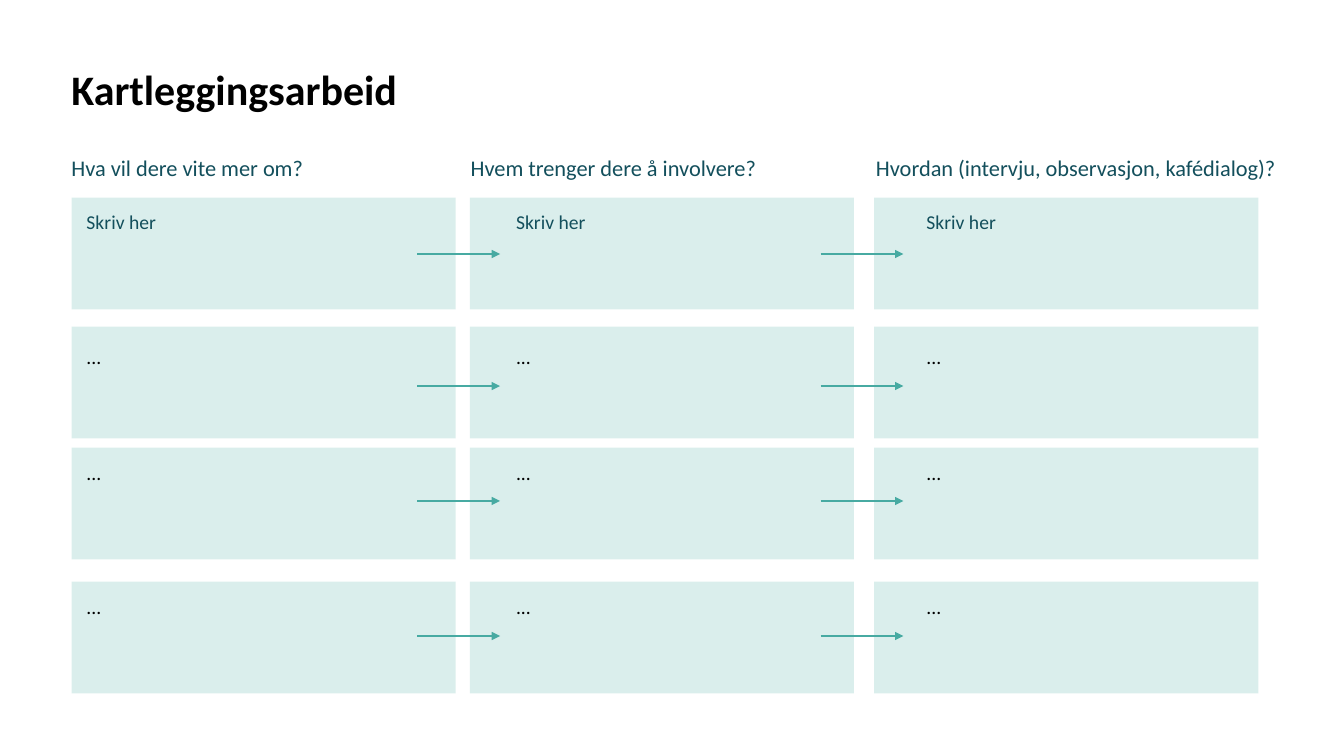
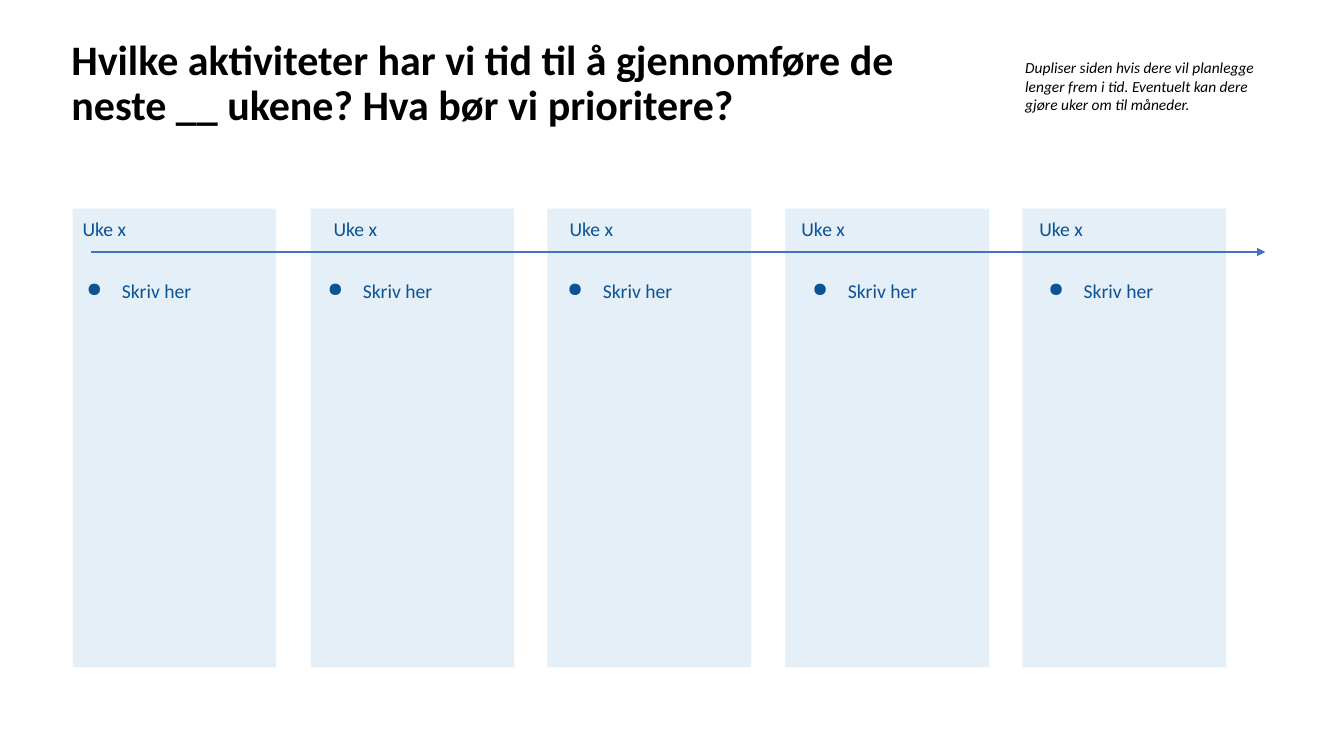
from dataclasses import dataclass

from lxml import etree
from pptx import Presentation
from pptx.dml.color import RGBColor
from pptx.enum.shapes import MSO_CONNECTOR, MSO_SHAPE
from pptx.enum.text import MSO_ANCHOR
from pptx.oxml.ns import qn
from pptx.util import Pt

PX = 9144  # one px is a hundredth of an inch
RECTANGLE = MSO_SHAPE.RECTANGLE
STRAIGHT = MSO_CONNECTOR.STRAIGHT
TOP, BOTTOM = MSO_ANCHOR.TOP, MSO_ANCHOR.BOTTOM


@dataclass(frozen=True)
class Theme:
    font: str = "Calibri"
    black: str = "000000"
    teal: str = "47AAA2"
    dark_teal: str = "134F5C"
    pale_blue: str = "CFE2F3"
    dark_blue: str = "0B5394"
    arrow_blue: str = "4472C4"
    title_size: int = 30
    heading_size: int = 16
    body_size: int = 14
    note_size: int = 11
    arrow_width: float = 1.5


theme = Theme()


def add_text(slide, text, left, top, width, height, size, color, anchor=TOP):
    box = slide.shapes.add_textbox(left * PX, top * PX, width * PX, height * PX)
    box.text_frame.word_wrap = True
    box.text_frame.vertical_anchor = anchor
    paragraph = box.text_frame.paragraphs[0]
    paragraph.text = text
    paragraph.font.name = theme.font
    paragraph.font.size = Pt(size)
    paragraph.font.color.rgb = RGBColor.from_string(color)
    return paragraph


def add_panel(slide, left, top, width, height, color, opacity):
    panel = slide.shapes.add_shape(
        RECTANGLE, left * PX, top * PX, width * PX, height * PX)
    panel.shadow.inherit = False
    panel.line.fill.background()
    panel.fill.solid()
    panel.fill.fore_color.rgb = RGBColor.from_string(color)
    color_node = next(panel.fill._xPr.iter(qn("a:srgbClr")))
    etree.SubElement(color_node, qn("a:alpha"), val=str(opacity * 1000))


presentation = Presentation()
presentation.slide_width = 1333 * PX
presentation.slide_height = 750 * PX
blank = presentation.slide_layouts[6]
survey = presentation.slides.add_slide(blank)
plan = presentation.slides.add_slide(blank)

# Titles
for slide, text, width, height, anchor in (
    (survey, "Kartleggingsarbeid", 610, 85, BOTTOM),
    (plan, "Hvilke aktiviteter har vi tid til å gjennomføre de neste __ ukene? "
           "Hva bør vi prioritere?", 927, 148, TOP),
):
    title = add_text(slide, text, 61, 34, width, height,
                     theme.title_size, theme.black, anchor)
    title.font.bold = True
    title.line_spacing = 0.9

arrows = []  # slide, left, right, y, color

# Survey: three columns of panels with headings
survey_columns = (  # heading, heading left, panel left, text left
    ("Hva vil dere vite mer om?", 61, 71, 76),
    ("Hvem trenger dere å involvere?", 457, 466, 502),
    ("Hvordan (intervju, observasjon, kafédialog)?", 859, 867, 909),
)
survey_rows = (  # panel top, text top, arrow y, text, text color
    (196, 203, 252, "Skriv her", theme.dark_teal),
    (324, 337, 383, "...", theme.black),
    (444, 452, 497, "...", theme.black),
    (577, 585, 631, "...", theme.black),
)
for heading, heading_left, panel_left, text_left in survey_columns:
    add_text(survey, heading, heading_left, 148, 470, 37,
             theme.heading_size, theme.dark_teal)
    for panel_top, text_top, arrow_y, text, color in survey_rows:
        add_panel(survey, panel_left, panel_top, 381, 111, theme.teal, 20)
        add_text(survey, text, text_left, text_top, 330, 93,
                 theme.body_size, color)

for panel_top, text_top, arrow_y, text, color in survey_rows:
    for arrow_left in (414, 814):
        arrows.append((survey, arrow_left, arrow_left + 82, arrow_y, theme.teal))

# Plan: one panel per week, evenly spaced
week_lefts = (72, 321, 555, 785, 1021)
task_lefts = (61, 300, 538, 781, 1015)
for index, (week_left, task_left) in enumerate(zip(week_lefts, task_lefts)):
    add_panel(plan, 72 + (471 * index + 1) // 2, 207, 202, 455,
              theme.pale_blue, 54)
    add_text(plan, "Uke x", week_left, 210, 91, 34,
             theme.body_size, theme.dark_blue)
    task = add_text(plan, "Skriv her", task_left, 272, 201, 93,
                    theme.body_size, theme.dark_blue)
    properties = task._p.get_or_add_pPr()
    properties.set("marL", str(50 * PX))
    properties.set("indent", str(-35 * PX))
    bullet_color = etree.SubElement(properties, qn("a:buClr"))
    etree.SubElement(bullet_color, qn("a:srgbClr"), val=theme.dark_blue)
    etree.SubElement(properties, qn("a:buChar"), char="●")
    # The schema wants the bullet ahead of the font defaults
    properties.append(properties.find(qn("a:defRPr")))
arrows.append((plan, 90, 1255, 250, theme.arrow_blue))

# Plan: side note
note = add_text(
    plan,
    "Dupliser siden hvis dere vil planlegge lenger frem i tid. "
    "Eventuelt kan dere gjøre uker om til måneder.",
    1007, 53, 256, 219, theme.note_size, theme.black)
note.font.italic = True
note.space_before = Pt(5)

# Arrows lie over the panels
for slide, left, right, y, color in arrows:
    arrow = slide.shapes.add_connector(
        STRAIGHT, left * PX, y * PX, right * PX, y * PX)
    arrow.line.color.rgb = RGBColor.from_string(color)
    arrow.line.width = Pt(theme.arrow_width)
    etree.SubElement(arrow.line._get_or_add_ln(), qn("a:tailEnd"), type="triangle")
    etree.SubElement(arrow._element.spPr, qn("a:effectLst"))

presentation.save("out.pptx")
